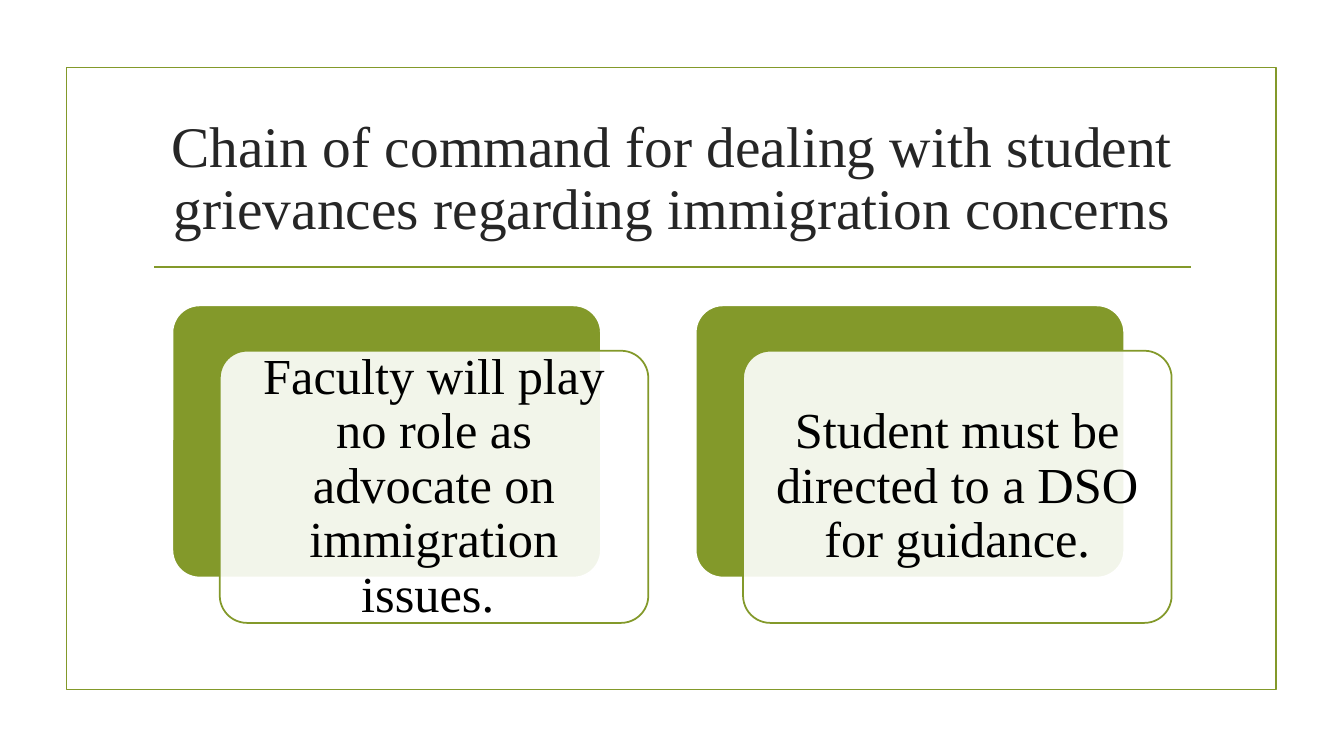
import pptx
import pptx.util
import pptx.dml.color
import pptx.enum.shapes
import pptx.enum.text
import pptx.oxml
import pptx.oxml.ns

SCALE = 9144  # EMU per px, 100 px to the inch
COLORS = {"green": "83992A", "white": "FFFFFF", "ink": "262626", "black": "000000"}
KINDS = pptx.enum.shapes.MSO_SHAPE


def px(num):
    return pptx.util.Emu(num * SCALE)


def rgb(name):
    return pptx.dml.color.RGBColor.from_string(COLORS[name])


class Deck:
    face = "Times New Roman"
    stroke = pptx.util.Pt(1.25)

    def __init__(self, wide, high):
        self.file = pptx.Presentation()
        self.file.slide_width, self.file.slide_height = px(wide), px(high)
        self.slide = self.file.slides.add_slide(self.file.slide_layouts[5])

    def label(self, shape, text, size, color, inset):
        frame = shape.text_frame
        edges = {"margin_" + side: px(inset[0]) for side in ("left", "right")}
        edges |= {"margin_" + side: px(inset[1]) for side in ("top", "bottom")}
        form = {"word_wrap": True, "auto_size": pptx.enum.text.MSO_AUTO_SIZE.NONE,
                "vertical_anchor": pptx.enum.text.MSO_ANCHOR.MIDDLE, **edges}
        for key, val in form.items():
            setattr(frame, key, val)
        para = frame.paragraphs[0]
        para.alignment = pptx.enum.text.PP_ALIGN.CENTER
        para.line_spacing = 0.9
        run = para.add_run()
        run.text = text
        for key, val in {"name": self.face, "size": pptx.util.Pt(size)}.items():
            setattr(run.font, key, val)
        run.font.color.rgb = rgb(color)

    def title(self, box, text):
        shape = self.slide.shapes.title
        for key, val in zip(("left", "top", "width", "height"), box):
            setattr(shape, key, px(val))
        self.label(shape, text, 41, "ink", (10, 5))

    def shape(self, kind, box, line, fill=None, alpha=None):
        shape = self.slide.shapes.add_shape(kind, *map(px, box))
        shape.shadow.inherit = False
        shape.line.color.rgb = rgb(line)
        shape.line.width = self.stroke
        if fill:
            shape.fill.solid()
            shape.fill.fore_color.rgb = rgb(fill)
        else:
            shape.fill.background()
        if alpha:
            tint = shape._element.spPr.find(
                "/".join(map(pptx.oxml.ns.qn, ("a:solidFill", "a:srgbClr"))))
            tint.append(pptx.oxml.parse_xml(
                f'<a:alpha {pptx.oxml.ns.nsdecls("a")} val="{alpha * 1000}"/>'))
        return shape

    def rule(self, left, top, right):
        line = self.slide.shapes.add_connector(
            pptx.enum.shapes.MSO_CONNECTOR.STRAIGHT, *map(px, (left, top, right, top)))
        line.line.color.rgb = rgb("green")
        line.line.width = self.stroke
        line._element.spPr.append(pptx.oxml.parse_xml(
            f'<a:effectLst {pptx.oxml.ns.nsdecls("a")}/>'))

    def card(self, left, top, text):
        size = (425, 270)
        back = self.shape(KINDS.ROUNDED_RECTANGLE, (left, top, *size), "white", "green")
        front = self.shape(KINDS.ROUNDED_RECTANGLE, (left + 47, top + 45, *size),
                           "green", "white", 90)
        for part in (back, front):
            part.adjustments[0] = 0.1
        self.label(front, text, 36, "black", (15, 15))


def main():
    deck = Deck(1333, 750)

    # Frame and heading
    deck.shape(KINDS.RECTANGLE, (66, 67, 1200, 617), "green")
    deck.rule(153, 265, 1181)
    deck.title((142, 107, 1050, 143), "Chain of command for dealing with student "
               "grievances regarding immigration concerns")

    # Layered cards
    notes = ("Faculty will play no role as advocate on immigration issues. ",
             "Student must be directed to a DSO for guidance.")
    for num, note in enumerate(notes):
        deck.card(171 + 519 * num, 303, note)

    deck.file.save("out.pptx")


if __name__ == "__main__":
    main()
